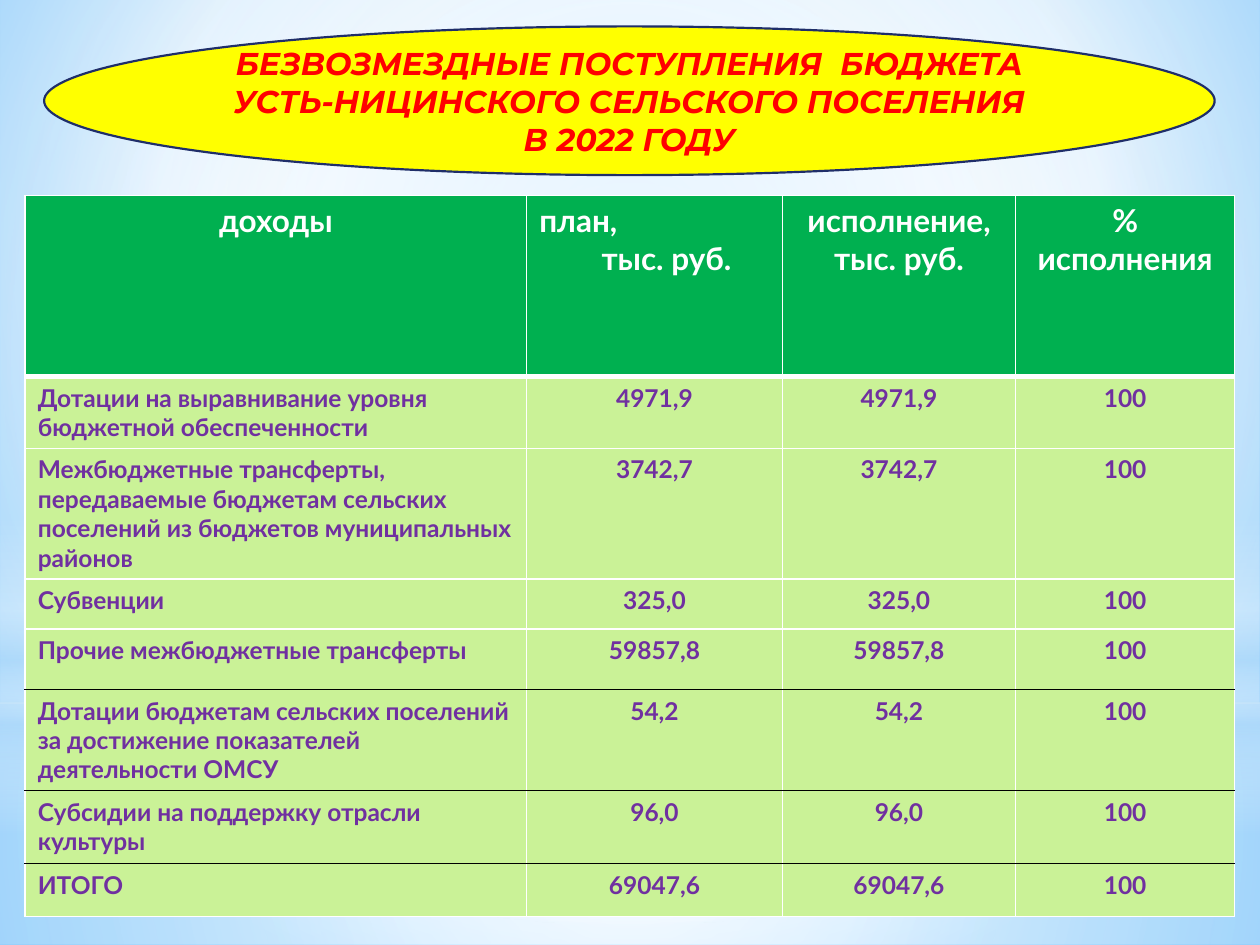
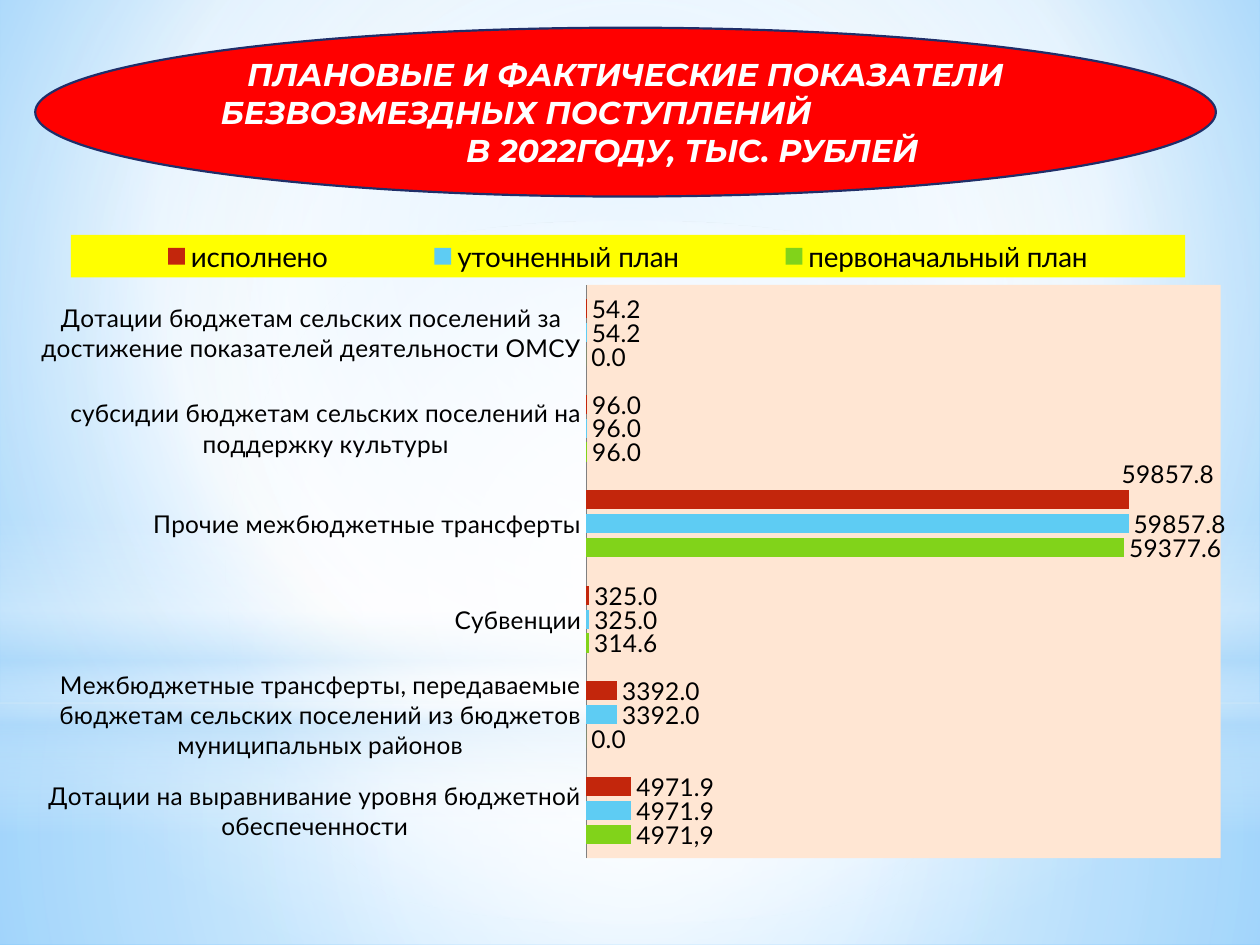
from lxml import etree
from pptx import Presentation
from pptx.chart.data import CategoryChartData
from pptx.dml.color import RGBColor
from pptx.enum.chart import XL_CHART_TYPE, XL_LABEL_POSITION, XL_LEGEND_POSITION, XL_TICK_MARK
from pptx.enum.shapes import MSO_SHAPE
from pptx.enum.text import MSO_ANCHOR, PP_ALIGN
from pptx.oxml.ns import qn
from pptx.util import Inches, Pt

RECTANGLE, OVAL = MSO_SHAPE.RECTANGLE, MSO_SHAPE.OVAL
LEFT, CENTER = PP_ALIGN.LEFT, PP_ALIGN.CENTER
TOP, MIDDLE = MSO_ANCHOR.TOP, MSO_ANCHOR.MIDDLE
BAR_CLUSTERED = XL_CHART_TYPE.BAR_CLUSTERED
LEGEND_TOP = XL_LEGEND_POSITION.TOP
OUTSIDE_END = XL_LABEL_POSITION.OUTSIDE_END
NO_TICKS = XL_TICK_MARK.NONE

WHITE, BLACK, RED, YELLOW = "FFFFFF", "000000", "FF0000", "FFFF00"
SKY, NAVY, GREEN, LIME, PURPLE = "B4DCFA", "1F2E69", "00B050", "CAF297", "7030A0"
PEACH, GREY = "FFE6D3", "808080"
TITLE_FONT, BODY_FONT = "Montserrat", "Lato"

SLIDE_SIZE = (10, 7.5)
MIDPOINT = (50, 50, 50, 50)
BACKDROP = ([(0, "9ED5FF", 100), (60, WHITE, 100), (100, "5BB9FF", 100)], (20, 10, 20, 60))
BACKDROP_BANDS = [
    (RECTANGLE, (0, 5.58, 10, 1.92), [(0, WHITE, 91), (37, WHITE, 76), (100, SKY, 79)], MIDPOINT),
    (RECTANGLE, (0, 0, 10, 5.58), [(0, WHITE, 89), (48, WHITE, 62), (100, SKY, 79)], MIDPOINT),
    (RECTANGLE, (0, 4.12, 10, 2.5),
     [(0, WHITE, 0), (29, WHITE, 30), (45, SKY, 40), (55, WHITE, 26), (65, SKY, 60), (100, WHITE, 0)], None),
    (OVAL, (0, 1.75, 10, 5.58), [(0, WHITE, 100), (56, WHITE, 0)], MIDPOINT),
]

INCOME_TITLE = [
    ("БЕЗВОЗМЕЗДНЫЕ ПОСТУПЛЕНИЯ  БЮДЖЕТА УСТЬ-НИЦИНСКОГО СЕЛЬСКОГО ПОСЕЛЕНИЯ В 2022 ГОДУ", CENTER, 0),
]
INDICATORS_TITLE = [
    ("ПЛАНОВЫЕ И ФАКТИЧЕСКИЕ ПОКАЗАТЕЛИ", CENTER, 0),
    ("БЕЗВОЗМЕЗДНЫХ ПОСТУПЛЕНИЙ", LEFT, 0),
    ("В 2022ГОДУ, ТЫС. РУБЛЕЙ", CENTER, 1.06),
]

INCOME_HEADINGS = [
    [("доходы", CENTER, 0)],
    [("план,", LEFT, 0), ("тыс. руб.", CENTER, 0.19)],
    [("исполнение, тыс. руб.", CENTER, 0)],
    [("% исполнения", CENTER, 0)],
]
INCOME_ROWS = [
    ("Дотации на выравнивание уровня бюджетной обеспеченности", "4971,9", "4971,9", "100"),
    ("Межбюджетные трансферты, передаваемые бюджетам сельских поселений из бюджетов "
     "муниципальных районов", "3742,7", "3742,7", "100"),
    ("Субвенции", "325,0", "325,0", "100"),
    ("Прочие межбюджетные трансферты", "59857,8", "59857,8", "100"),
    ("Дотации бюджетам сельских поселений за достижение показателей деятельности ОМСУ",
     "54,2", "54,2", "100"),
    ("Субсидии на поддержку отрасли культуры", "96,0", "96,0", "100"),
    ("ИТОГО", "69047,6", "69047,6", "100"),
]
COLUMN_WIDTHS = [3.98, 2.03, 1.85, 1.74]
ROW_HEIGHTS = [1.44, 0.57, 1.03, 0.4, 0.48, 0.79, 0.58, 0.42]
SPECIAL_RULES = {1: (WHITE, 3), 5: (BLACK, 1), 6: (BLACK, 1), 7: (BLACK, 1)}

TRANSFER_KINDS = [
    "Дотации на выравнивание уровня бюджетной обеспеченности",
    "Межбюджетные трансферты, передаваемые бюджетам сельских поселений из бюджетов "
    "муниципальных районов",
    "Субвенции",
    "Прочие межбюджетные трансферты",
    "субсидии бюджетам сельских поселений на поддержку культуры",
    "Дотации бюджетам сельских поселений за достижение показателей деятельности ОМСУ",
]
INDICATORS = [
    ("первоначальный план", "81D31A", (4971.9, 0, 314.6, 59377.6, 96, 0)),
    ("уточненный план", "5ECCF3", (4971.9, 3392, 325, 59857.8, 96, 54.2)),
    ("исполнено", "C3260C", (4971.9, 3392, 325, 59857.8, 96, 54.2)),
]


def rgb(color):
    return RGBColor.from_string(color)


def node(parent, tag, **attributes):
    return etree.SubElement(parent, qn(tag), {key: str(value) for key, value in attributes.items()})


def solid(parent, color):
    node(node(parent, "a:solidFill"), "a:srgbClr", val=color)


def set_gradient(fill, owner, stops, focus):
    fill.gradient()
    gradient = owner.find(".//" + qn("a:gradFill"))
    for child in list(gradient):
        gradient.remove(child)
    stop_list = node(gradient, "a:gsLst")
    for position, color, opacity in stops:
        stop = node(stop_list, "a:gs", pos=position * 1000)
        node(node(stop, "a:srgbClr", val=color), "a:alpha", val=opacity * 1000)
    if focus:
        circle = node(gradient, "a:path", path="circle")
        node(circle, "a:fillToRect", **{side: share * 1000 for side, share in zip("ltrb", focus)})
    else:
        node(gradient, "a:lin", ang=90 * 60000, scaled=0)


def add_preset(slide, preset, box):
    shape = slide.shapes.add_shape(preset, *map(Inches, box))
    shape.shadow.inherit = False
    return shape


def build_backdrop(master, slide):
    set_gradient(master.background.fill, master.element, *BACKDROP)
    for number, (preset, box, stops, focus) in enumerate(BACKDROP_BANDS):
        band = add_preset(slide, preset, box)
        band.line.fill.background()
        set_gradient(band.fill, band.element, stops, focus)
        band.element.find(".//" + qn("p:cNvPr")).set("id", str(20 + number))
        master.shapes.element.append(band.element)


def style_font(font, name, size, color, bold=False, italic=False):
    font.name, font.size = name, Pt(size)
    font.bold, font.italic = bold, italic
    font.color.rgb = rgb(color)


def write_lines(frame, lines, *font_style, **emphasis):
    frame.text = "\n".join(text for text, _, _ in lines)
    for paragraph, (_, alignment, indent) in zip(frame.paragraphs, lines):
        paragraph.alignment = alignment
        if indent:
            paragraph.runs[0].font
            paragraph._p.get_or_add_pPr().set("marL", str(Inches(indent)))
        for run in paragraph.runs:
            style_font(run.font, *font_style, **emphasis)


def add_title_oval(slide, box, lines, fill, color):
    oval = add_preset(slide, OVAL, box)
    oval.fill.solid()
    oval.fill.fore_color.rgb = rgb(fill)
    oval.line.color.rgb = rgb(NAVY)
    oval.line.width = Pt(1.25)
    oval.text_frame.word_wrap = True
    oval.text_frame.vertical_anchor = MIDDLE
    write_lines(oval.text_frame, lines, TITLE_FONT, 18, color, bold=True, italic=True)


def set_borders(cell, row):
    plain = (WHITE, 1)
    rules = {"L": plain, "R": plain,
             "T": SPECIAL_RULES.get(row, plain), "B": SPECIAL_RULES.get(row + 1, plain)}
    properties = cell._tc.get_or_add_tcPr()
    for side, (color, width) in rules.items():
        solid(node(properties, "a:ln" + side, w=Pt(width)), color)


def add_income_table(slide):
    rows = [INCOME_HEADINGS] + [
        [[(text, CENTER if column else LEFT, 0)] for column, text in enumerate(row)]
        for row in INCOME_ROWS
    ]
    box = (0.2, 1.55, sum(COLUMN_WIDTHS), sum(ROW_HEIGHTS))
    table = slide.shapes.add_table(len(rows), len(COLUMN_WIDTHS), *map(Inches, box)).table
    table.horz_banding = False
    for column, width in zip(table.columns, COLUMN_WIDTHS):
        column.width = Inches(width)
    for row, (lines_by_column, height) in enumerate(zip(rows, ROW_HEIGHTS)):
        table.rows[row].height = Inches(height)
        fill, size, color = (LIME, 14, PURPLE) if row else (GREEN, 18, WHITE)
        for column, lines in enumerate(lines_by_column):
            cell = table.cell(row, column)
            set_borders(cell, row)
            cell.fill.solid()
            cell.fill.fore_color.rgb = rgb(fill)
            cell.vertical_anchor = TOP
            write_lines(cell.text_frame, lines, BODY_FONT, size, color, bold=True)


def manual_layout(parent, index, **settings):
    for existing in parent.findall(qn("c:layout")):
        parent.remove(existing)
    layout = etree.Element(qn("c:layout"))
    manual = node(layout, "c:manualLayout")
    for tag, value in settings.items():
        node(manual, "c:" + tag, val=value)
    parent.insert(index, layout)


def filled_properties(color):
    properties = etree.Element(qn("c:spPr"))
    solid(properties, color)
    return properties


def add_indicator_chart(slide):
    data = CategoryChartData(number_format="0.0")
    data.categories = TRANSFER_KINDS
    for name, _, values in INDICATORS:
        data.add_series(name, values)
    box = map(Inches, (0.28, 1.78, 9.45, 5.28))
    chart = slide.shapes.add_chart(BAR_CLUSTERED, *box, data).chart
    chart.has_title = False
    style_font(chart.font, BODY_FONT, 14, BLACK)

    kinds, amounts = chart.category_axis, chart.value_axis
    kinds.major_tick_mark = NO_TICKS
    kinds.format.line.color.rgb = rgb(GREY)
    amounts.visible = False
    amounts.has_major_gridlines = False
    amounts.minimum_scale, amounts.maximum_scale = 0, 70000

    plot = chart.plots[0]
    plot.vary_by_categories = False
    plot.gap_width, plot.overlap = 150, -25
    for series, (_, color, _) in zip(plot.series, INDICATORS):
        series.format.fill.solid()
        series.format.fill.fore_color.rgb = rgb(color)
        labels = series.data_labels
        labels.show_value = True
        labels.number_format, labels.number_format_is_linked = "0.0", False
        labels.position = OUTSIDE_END
        style_font(labels.font, BODY_FONT, 14, BLACK)

    planned, _, executed = plot.series
    comma_label = planned.points[0].data_label
    write_lines(comma_label.text_frame, [("4971,9", CENTER, 0)], BODY_FONT, 14, BLACK)
    comma_label.position = OUTSIDE_END
    raised_label = executed.points[3].data_label
    style_font(raised_label.font, BODY_FONT, 14, BLACK)
    raised_label.position = OUTSIDE_END
    manual_layout(chart.element.findall(".//" + qn("c:dLbl"))[-1], 1, x=-0.01, y=-0.04)

    plot_area = chart.element.find(".//" + qn("c:plotArea"))
    manual_layout(plot_area, 0, layoutTarget="inner", xMode="edge", yMode="edge",
                  x=0.465, y=0.091, w=0.535, h=0.862)
    plot_area.append(filled_properties(PEACH))

    chart.has_legend = True
    chart.legend.position = LEGEND_TOP
    chart.legend.include_in_layout = False
    style_font(chart.legend.font, BODY_FONT, 16, BLACK)
    legend = chart.element.find(".//" + qn("c:legend"))
    manual_layout(legend, 1, xMode="edge", yMode="edge", x=0.03, y=0.016, w=0.94, h=0.064)
    legend.find(qn("c:txPr")).addprevious(filled_properties(YELLOW))


def main():
    presentation = Presentation()
    presentation.slide_width, presentation.slide_height = map(Inches, SLIDE_SIZE)
    blank = presentation.slide_layouts[6]
    income, indicators = [presentation.slides.add_slide(blank) for _ in range(2)]
    build_backdrop(presentation.slide_master, income)
    add_income_table(income)
    add_title_oval(income, (0.35, 0.21, 9.29, 1.18), INCOME_TITLE, YELLOW, RED)
    add_indicator_chart(indicators)
    add_title_oval(indicators, (0.28, 0.22, 9.37, 1.34), INDICATORS_TITLE, RED, WHITE)
    presentation.save("out.pptx")


if __name__ == "__main__":
    main()
